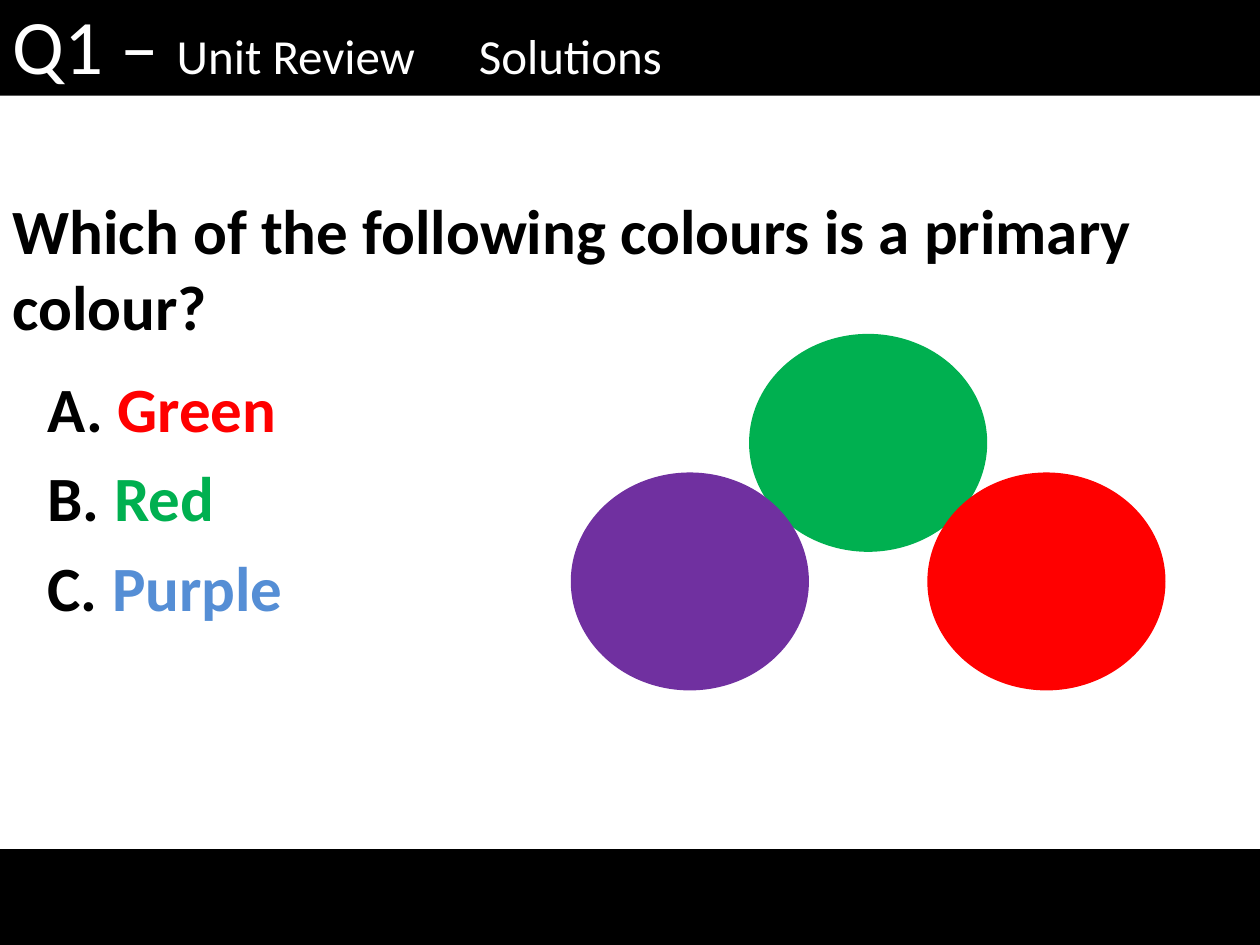
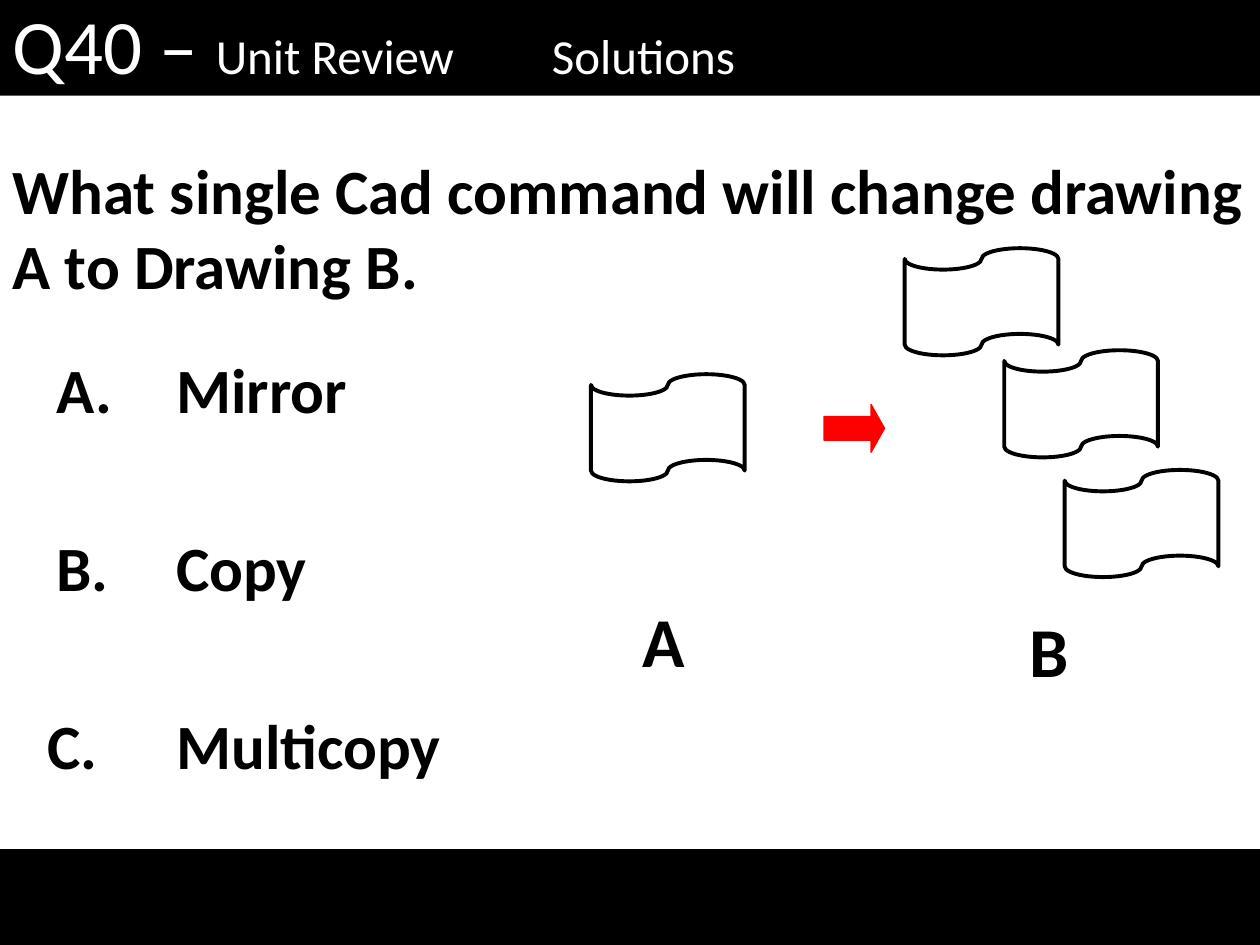
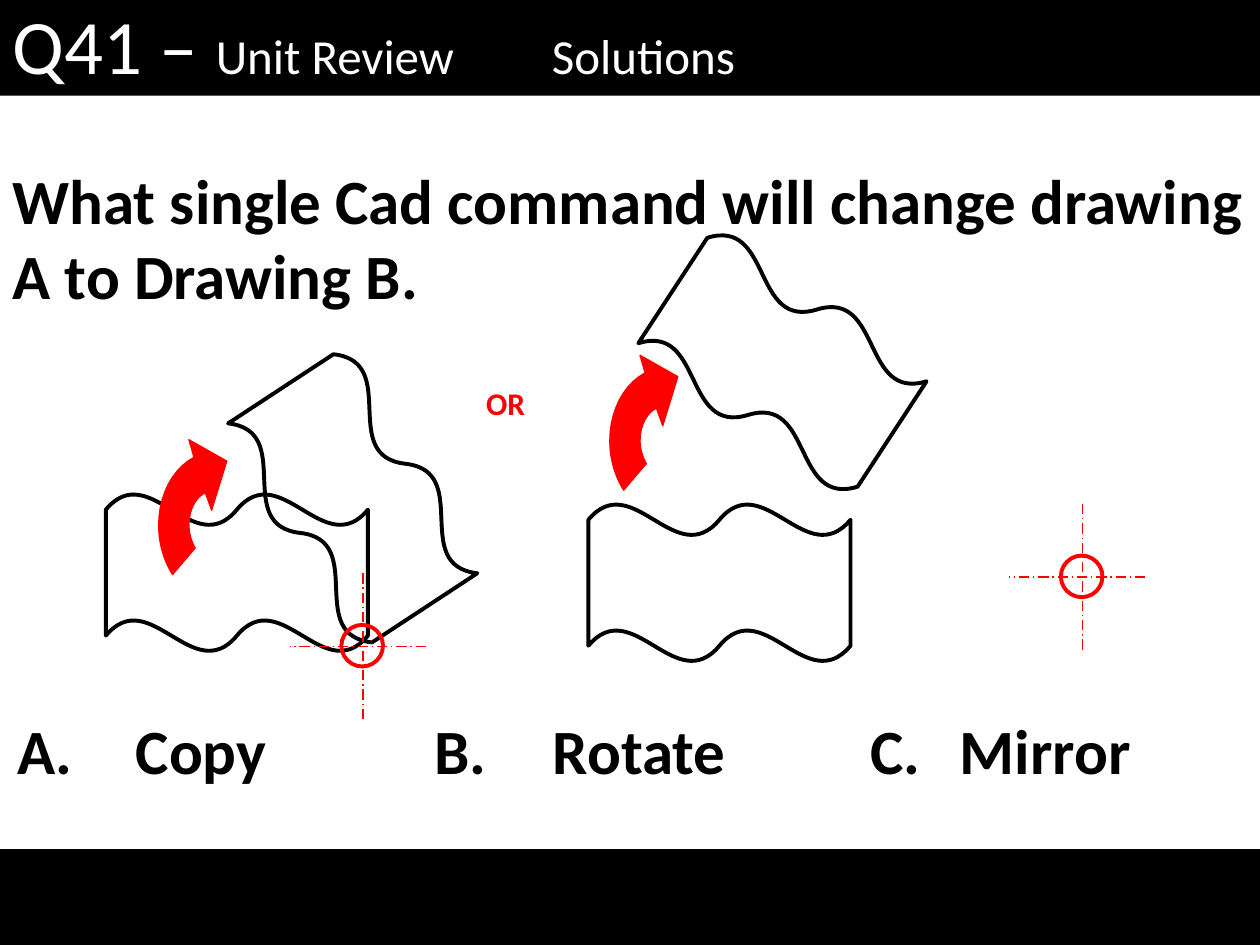
from lxml import etree
from pptx import Presentation
from pptx import util as u
from pptx.dml.color import RGBColor
from pptx.enum import dml, shapes, text
from pptx.oxml.ns import qn

BLACK = RGBColor(0x00, 0x00, 0x00)
WHITE = RGBColor(0xFF, 0xFF, 0xFF)
RED = RGBColor(0xFF, 0x00, 0x00)
GREEN = RGBColor(0x00, 0xB0, 0x50)
PURPLE = RGBColor(0x70, 0x30, 0xA0)
BLUE = RGBColor(0x55, 0x8E, 0xD5)

FONT = "Calibri"
WIDTH, HEIGHT, BAND = 10, 7.5, 0.76
ROW = 0.71
PRESET = shapes.MSO_SHAPE

COMMAND_QUESTION = "What single Cad command will change drawing A to Drawing B."
QUESTIONS = {
    "colour": dict(number="Q1", solutions_at=3.7, top=1.47, width=9.37,
                   question="Which of the following colours is a primary colour?"),
    "copies": dict(number="Q40", solutions_at=4.28, top=1.15, width=WIDTH,
                   question=COMMAND_QUESTION),
    "rotation": dict(number="Q41", solutions_at=4.28, top=1.23, width=WIDTH,
                     question=COMMAND_QUESTION),
}

COLOUR_OPTIONS = [("A. ", "Green", RED), ("B. ", "Red", GREEN), ("C. ", "Purple", BLUE)]
DISCS = [(1, 0, GREEN), (2, 1, RED), (0, 1, PURPLE)]

COPY_OPTIONS = [("A.", 0.35, "Mirror"), ("B.", 0.35, "Copy"), ("C.", 0.28, "Multicopy")]
DRAWINGS = [
    ("A", (5, 4.69), [(4.69, 2.97)]),
    ("B", (8.07, 4.77), [(7.18, 1.97), (7.97, 2.78), (8.45, 3.73)]),
]

ROTATE_OPTIONS = [("A.", 0.04, "Copy", 0.98, 1.73), ("B.", 3.35, "Rotate", 4.29, 1.57),
                  ("C.", 6.81, "Mirror", 7.52, 2.6)]
WAVES = [(0.84, 3.92, 0), (1.76, 3.33, 236.7), (4.67, 4, 0), (5.17, 2.25, 33.2)]
TURN_ARROWS = [(1.26, 3.49), (4.84, 2.82)]
TURN_OUTLINE = [
    [(0.37, 0.42)],
    [(0.29, 0.46), (0.24, 0.56), (0.24, 0.68)],
    [(0.24, 0.74), (0.26, 0.81), (0.29, 0.86)],
    [(0.11, 1.07)],
    [(0.04, 0.96), (0, 0.82), (0, 0.68)],
    [(0, 0.44), (0.11, 0.23), (0.28, 0.14)],
    [(0.24, 0)],
    [(0.54, 0.17)],
    [(0.42, 0.56)],
]
PIVOTS = [(8.59, 4.58), (2.88, 5.13)]


def inches(*lengths):
    return [u.Inches(length) for length in lengths]


def style(font, size, colour, bold=False):
    font.name, font.size, font.bold = FONT, u.Pt(size), bold
    font.color.rgb = colour


def add_words(parent, box, words, size=36, colour=BLACK):
    frame = parent.add_textbox(*inches(*box)).text_frame
    frame.word_wrap = True
    frame.auto_size = text.MSO_AUTO_SIZE.SHAPE_TO_FIT_TEXT
    paragraph = frame.paragraphs[0]
    paragraph.add_run().text = words
    style(paragraph.font, size, colour, True)
    return paragraph


def paint(shape, fill=None, line=None, weight=0.75):
    shape.shadow.inherit = False
    if fill is None:
        shape.fill.background()
    else:
        shape.fill.solid()
        shape.fill.fore_color.rgb = fill
    if line is None:
        shape.line.fill.background()
    else:
        shape.line.color.rgb = line
        shape.line.width = u.Pt(weight)


def add_preset(parent, preset, box, fill=None, line=None, weight=0.75):
    shape = parent.add_shape(preset, *inches(*box))
    paint(shape, fill, line, weight)
    return shape


def place(placeholder, box):
    placeholder.left, placeholder.top, placeholder.width, placeholder.height = inches(*box)
    frame = placeholder.text_frame
    frame.auto_size = text.MSO_AUTO_SIZE.NONE
    frame.word_wrap = True
    paragraph = frame.paragraphs[0]
    paragraph.alignment = text.PP_ALIGN.LEFT
    paragraph.space_before = u.Pt(0)
    return paragraph


def add_question(prs, number, solutions_at, top, width, question):
    slide = prs.slides.add_slide(prs.slide_layouts[1])
    title, body = slide.placeholders

    heading = place(title, (0, 0, WIDTH, BAND))
    title.fill.solid()
    title.fill.fore_color.rgb = BLACK
    title.text_frame.vertical_anchor = text.MSO_ANCHOR.BOTTOM
    tabs = etree.SubElement(heading._p.get_or_add_pPr(), qn("a:tabLst"))
    etree.SubElement(tabs, qn("a:tab"), pos=str(u.Inches(solutions_at)), algn="l")
    for words, size in [(f"{number} – ", 44), ("Unit Review\tSolutions", 28)]:
        run = heading.add_run()
        run.text = words
        style(run.font, size, WHITE)

    asked = place(body, (0, top, width, 1.31))
    properties = asked._p.get_or_add_pPr()
    properties.set("marL", "0")
    properties.set("indent", "0")
    etree.SubElement(properties, qn("a:buNone"))
    asked.add_run().text = question
    style(asked.font, 36, BLACK, True)

    add_preset(slide.shapes, PRESET.RECTANGLE, (0, HEIGHT - BAND, WIDTH, BAND), BLACK)
    return slide.shapes


def draw_colours(canvas):
    for row, (letter, answer, colour) in enumerate(COLOUR_OPTIONS):
        option = add_words(canvas, (0.28, 2.88 + row * ROW, 4.25, ROW), letter)
        run = option.add_run()
        run.text = answer
        run.font.color.rgb = colour
    discs = canvas.add_group_shape().shapes
    for column, row, colour in DISCS:
        add_preset(discs, PRESET.OVAL,
                   (4.53 + column * 1.415, 2.65 + row * 1.1, 1.89, 1.73), colour)


def draw_copies(canvas):
    for row, (letter, left, answer) in enumerate(COPY_OPTIONS):
        top = 2.73 + row * 1.415
        add_words(canvas, (left, top, 0.84, ROW), letter)
        add_words(canvas, (1.3, top, 4.02, ROW), answer)
    arrow = add_preset(canvas, PRESET.RIGHT_ARROW, (6.54, 3.21, 0.48, 0.38), RED, RED)
    arrow.adjustments[1] = 0.28
    for label, corner, flags in DRAWINGS:
        drawing = canvas.add_group_shape().shapes
        add_words(drawing, (*corner, 0.71, 0.77), label, 40)
        for flag in flags:
            add_preset(drawing, PRESET.FLOWCHART_PUNCHED_TAPE, (*flag, 1.22, 0.85),
                       line=BLACK, weight=2.25)


def curve(start, first, second, end, steps=10):
    for step in range(1, steps + 1):
        t = step / steps
        s = 1 - t
        yield tuple(s**3 * a + 3 * s * s * t * b + 3 * s * t * t * c + t**3 * d
                    for a, b, c, d in zip(start, first, second, end))


def turn_points():
    points = []
    for segment in TURN_OUTLINE:
        points += curve(points[-1], *segment) if len(segment) == 3 else segment
    return points


def add_turn_arrow(canvas, left, top):
    start, *rest = [inches(left + x, top + y) for x, y in turn_points()]
    builder = canvas.build_freeform(*start)
    builder.add_line_segments(rest, close=True)
    paint(builder.convert_to_shape(), RED, RED)


def add_pivot(canvas, x, y):
    pivot = canvas.add_group_shape().shapes
    for ends in [(x, y - 0.58, x, y + 0.58), (x + 0.5, y, x - 0.58, y)]:
        axis = pivot.add_connector(shapes.MSO_CONNECTOR.STRAIGHT, *inches(*ends))
        axis.line.color.rgb = RED
        axis.line.width = u.Pt(0.75)
        axis.line.dash_style = dml.MSO_LINE.LONG_DASH_DOT
        etree.SubElement(axis._element.spPr, qn("a:effectLst"))
    add_preset(pivot, PRESET.OVAL, (x - 0.17, y - 0.17, 0.33, 0.33), line=RED, weight=2.25)


def draw_rotation(canvas):
    for letter, letter_left, answer, answer_left, width in ROTATE_OPTIONS:
        add_words(canvas, (letter_left, 5.6, 0.84, ROW), letter)
        add_words(canvas, (answer_left, 5.6, width, ROW), answer)
    for left, top, angle in WAVES:
        wave = add_preset(canvas, PRESET.DOUBLE_WAVE, (left, top, 2.08, 1.25),
                          line=BLACK, weight=2.25)
        wave.adjustments[0], wave.adjustments[1] = 0.1, 0
        wave.rotation = angle
    for corner in TURN_ARROWS:
        add_turn_arrow(canvas, *corner)
    for centre in PIVOTS:
        add_pivot(canvas, *centre)
    add_words(canvas, (3.76, 3, 0.75, 0.5), "OR", 18, RED)


def main():
    prs = Presentation()
    prs.slide_width, prs.slide_height = inches(WIDTH, HEIGHT)
    draw_colours(add_question(prs, **QUESTIONS["colour"]))
    draw_copies(add_question(prs, **QUESTIONS["copies"]))
    draw_rotation(add_question(prs, **QUESTIONS["rotation"]))
    prs.save("out.pptx")


if __name__ == "__main__":
    main()
